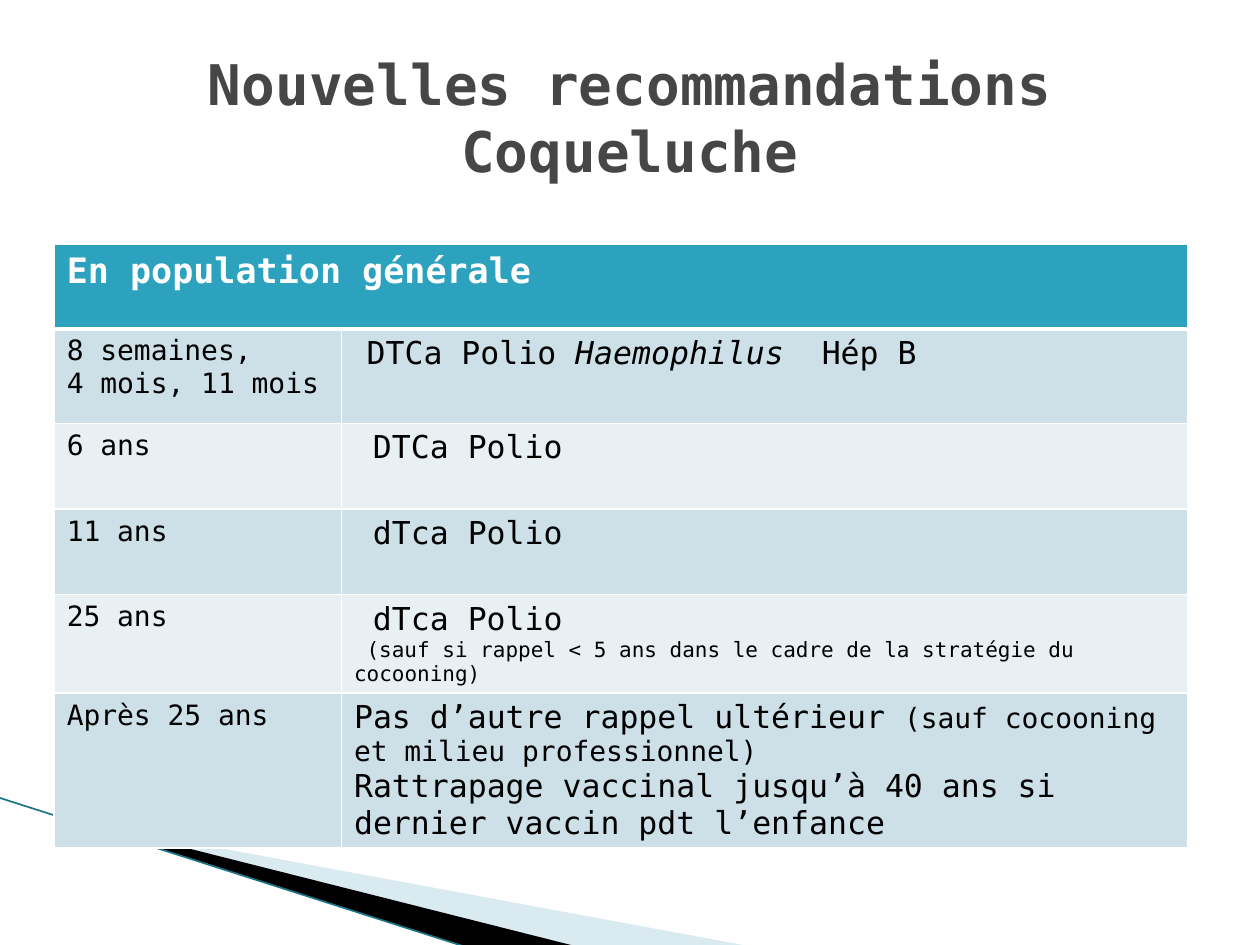
from lxml.etree import SubElement
from pptx import Presentation
from pptx.dml.color import RGBColor
from pptx.enum.shapes import MSO_CONNECTOR
from pptx.enum.text import MSO_ANCHOR, PP_ALIGN
from pptx.oxml.ns import qn
from pptx.util import Inches, Pt

FONT = "DejaVu Sans Mono"
COLORS = {
    "title": "464646", "header": "2DA2BF", "odd": "CDE0E8", "even": "E8F0F4",
    "white": "FFFFFF", "black": "000000", "band": "A0CBDC", "edge": "1C7489",
}
COLUMN_WIDTHS = [2.28, 6.72]
ROW_HEIGHTS = [0.67, 0.75, 0.68, 0.68, 0.78, 1.23]
SCHEDULE = [
    (["8 semaines,", "4 mois, 11 mois"],
     [(0.1, [("DTCa Polio ", 18, False), ("Haemophilus", 18, True), ("  Hép B", 18, False)])]),
    (["6 ans"], [(0.15, [("DTCa Polio", 18, False)])]),
    (["11 ans"], [(0.15, [("dTca Polio", 18, False)])]),
    (["25 ans"],
     [(0.15, [("dTca Polio", 18, False)]),
      (0.1, [("(sauf si rappel < 5 ans dans le cadre de la stratégie du cocooning)", 12, False)])]),
    (["Après 25 ans"],
     [(0, [("Pas d’autre rappel ultérieur ", 18, False),
           ("(sauf cocooning et milieu professionnel)", 16, False)]),
      (0, [("Rattrapage vaccinal jusqu’à 40 ans si dernier vaccin pdt l’enfance", 18, False)])]),
]


def color(name):
    """Return the named colour."""
    return RGBColor.from_string(COLORS[name])


def add_span(para, text, size, color_name, bold=False, italic=False):
    """Append one formatted run."""
    span = para.add_run()
    span.text = text
    font = span.font
    font.name, font.size, font.bold, font.italic = FONT, Pt(size), bold, italic
    font.color.rgb = color(color_name)


def write_paragraphs(frame, paragraphs):
    """Write paragraphs given as first-line indent and runs."""
    for index, (indent, spans) in enumerate(paragraphs):
        para = frame.add_paragraph() if index else frame.paragraphs[0]
        para._p.get_or_add_pPr().set("indent", str(Inches(indent)))
        for text, size, italic in spans:
            add_span(para, text, size, "black", italic=italic)


def style_cell(cell, fill_name, top=1, bottom=1):
    """Give a cell its white borders and its fill."""
    properties = cell._tc.get_or_add_tcPr()
    for side, width in (("L", 1), ("R", 1), ("T", top), ("B", bottom)):
        line = SubElement(properties, qn(f"a:ln{side}"), w=str(Pt(width)))
        fill = SubElement(line, qn("a:solidFill"))
        SubElement(fill, qn("a:srgbClr"), val=COLORS["white"])
    cell.fill.solid()
    cell.fill.fore_color.rgb = color(fill_name)


def add_wedge(page, left, top, points, color_name, alpha=100):
    """Draw a filled wedge from points relative to its corner."""
    corners = [(Inches(left + x), Inches(top + y)) for x, y in points]
    builder = page.shapes.build_freeform(*corners[0], scale=1.0)
    builder.add_line_segments(corners[1:], close=True)
    wedge = builder.convert_to_shape()
    wedge.shadow.inherit = False
    wedge.line.fill.background()
    wedge.fill.solid()
    wedge.fill.fore_color.rgb = color(color_name)
    if alpha < 100:
        tone = wedge._element.spPr.find(f"{qn('a:solidFill')}/{qn('a:srgbClr')}")
        SubElement(tone, qn("a:alpha"), val=str(alpha * 1000))


def add_decoration(page, left, top):
    """Draw the wedges and edge line in the lower left corner."""
    add_wedge(page, left + 0.56, top + 0.17, [(0, 0.01), (5.4, 1.01), (4.01, 1.01), (0, 0)], "band", 40)
    add_wedge(page, left + 0.54, top + 0.16, [(0, 0), (4.04, 1.02), (3.19, 1.03), (0.01, 0.01)], "black")
    edge = page.shapes.add_connector(
        MSO_CONNECTOR.STRAIGHT, Inches(left), Inches(top), Inches(left + 3.72), Inches(top + 1.19))
    edge.line.color.rgb = color("edge")
    edge.line.width = Pt(0.95)
    SubElement(edge._element.spPr, qn("a:effectLst"))


def add_title(page, left, top, width, height):
    """Place the centred title."""
    box = page.shapes.add_textbox(Inches(left), Inches(top), Inches(width), Inches(height))
    frame = box.text_frame
    frame.word_wrap = True
    frame.vertical_anchor = MSO_ANCHOR.MIDDLE
    para = frame.paragraphs[0]
    para.alignment = PP_ALIGN.CENTER
    add_span(para, "Nouvelles recommandations Coqueluche", 32, "title", bold=True)


def add_schedule(page, left, top):
    """Place the vaccination table."""
    table = page.shapes.add_table(
        len(ROW_HEIGHTS), len(COLUMN_WIDTHS), Inches(left), Inches(top),
        Inches(sum(COLUMN_WIDTHS)), Inches(sum(ROW_HEIGHTS))).table
    for column, width in zip(table.columns, COLUMN_WIDTHS):
        column.width = Inches(width)
    for row, height in zip(table.rows, ROW_HEIGHTS):
        row.height = Inches(height)
    header = table.cell(0, 0)
    header.merge(table.cell(0, 1))
    for cell in table.rows[0].cells:
        style_cell(cell, "header", bottom=3)
    add_span(header.text_frame.paragraphs[0], "En population générale", 20, "white", bold=True)
    for number, (ages, vaccines) in enumerate(SCHEDULE, 1):
        age_lines = [(0, [(age, 16, False)]) for age in ages]
        for cell, paragraphs in zip(table.rows[number].cells, (age_lines, vaccines)):
            style_cell(cell, "odd" if number % 2 else "even", top=3 if number == 1 else 1)
            write_paragraphs(cell.text_frame, paragraphs)


def main():
    """Build and save the slide."""
    deck = Presentation()
    deck.slide_width, deck.slide_height = Inches(10), Inches(7.5)
    page = deck.slides.add_slide(deck.slide_layouts[6])
    add_decoration(page, -0.01, 6.33)
    add_schedule(page, 0.43, 1.94)
    add_title(page, 0.5, 0.3, 9, 1.25)
    deck.save("out.pptx")


if __name__ == "__main__":
    main()
